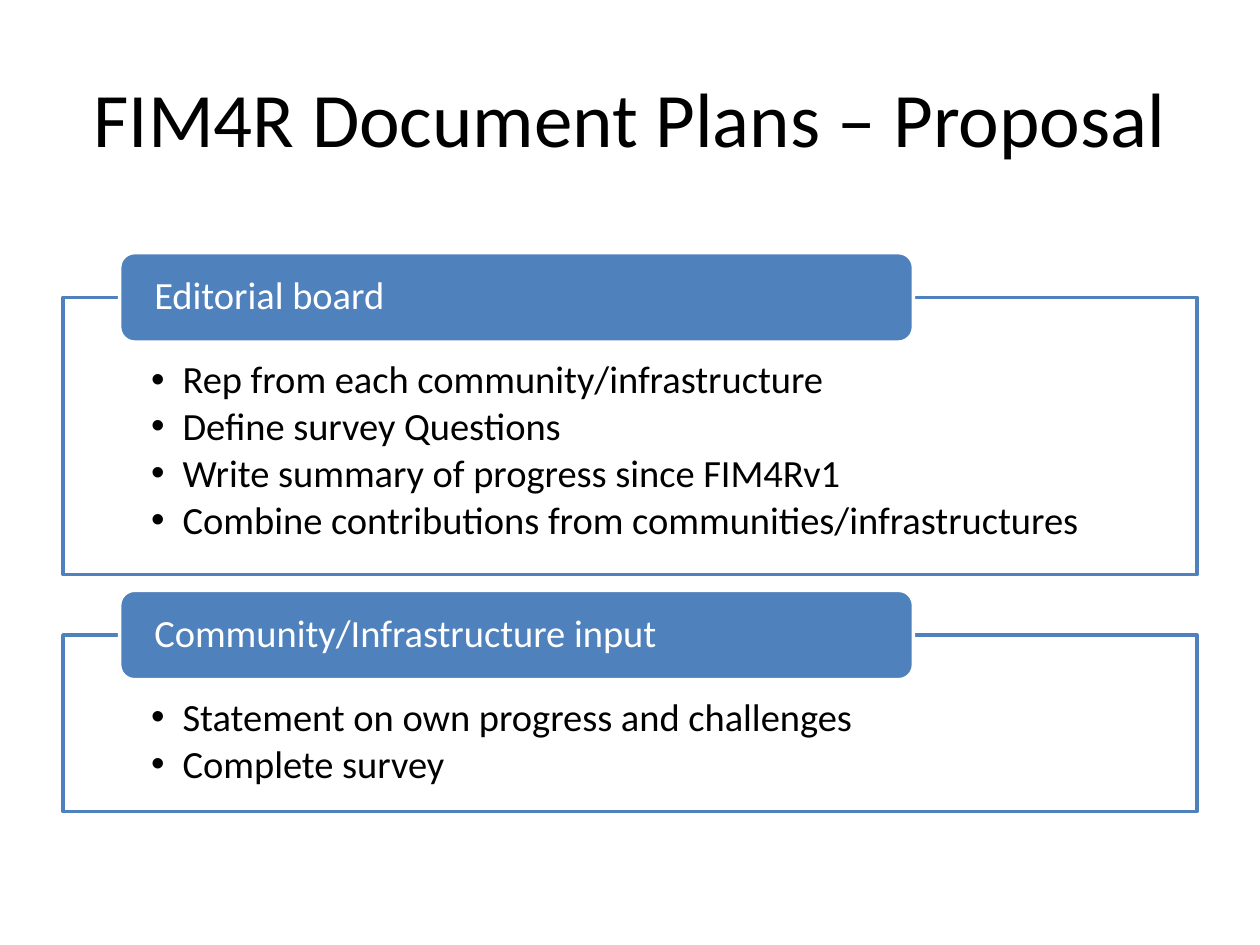
from lxml.etree import SubElement
from pptx import Presentation
from pptx.dml.color import RGBColor
from pptx.enum.shapes import MSO_SHAPE
from pptx.enum.text import MSO_ANCHOR, PP_ALIGN
from pptx.oxml.ns import qn
from pptx.util import Inches, Pt

COLORS = {"blue": "4F81BD", "white": "FFFFFF", "black": "000000"}
FONT = "Calibri"
TEXT_SIZE = 22
HEADER_HEIGHT = 0.71

# Top of the frame, height of the frame, header, bullets
SECTIONS = [
    (2.36, 2.2, "Editorial board", [
        "Rep from each community/infrastructure",
        "Define survey Questions",
        "Write summary of progress since FIM4Rv1",
        "Combine contributions from communities/infrastructures",
    ]),
    (5.04, 1.4, "Community/Infrastructure input", [
        "Statement on own progress and challenges",
        "Complete survey",
    ]),
]


def color(name):
    return RGBColor.from_string(COLORS[name])


def add_run(paragraph, text, size, color_name):
    run = paragraph.add_run()
    run.text = text
    run.font.name = FONT
    run.font.size = Pt(size)
    run.font.color.rgb = color(color_name)


def add_box(slide, preset, position, fill, line, anchor, insets):
    shape = slide.shapes.add_shape(preset, *[Inches(value) for value in position])
    shape.shadow.inherit = False
    shape.fill.solid()
    shape.fill.fore_color.rgb = color(fill)
    shape.line.color.rgb = color(line)
    shape.line.width = Pt(2)
    frame = shape.text_frame
    frame.word_wrap = True
    frame.vertical_anchor = anchor
    (frame.margin_left, frame.margin_top,
     frame.margin_right, frame.margin_bottom) = [Inches(value) for value in insets]
    return shape


def set_opacity(shape, percent):
    fill_color = shape.fill._xPr.find(qn("a:solidFill"))[0]
    SubElement(fill_color, qn("a:alpha"), val=str(percent * 1000))


def format_bullet(paragraph):
    paragraph.level = 1
    paragraph.space_after = Pt(3)
    properties = paragraph._p.get_or_add_pPr()
    properties.set("marL", str(Inches(0.25)))
    properties.set("indent", str(Inches(-0.25)))
    SubElement(properties, qn("a:buFont"), typeface="Arial")
    SubElement(properties, qn("a:buChar"), char="•")


def add_text_line(paragraph, text, color_name):
    paragraph.alignment = PP_ALIGN.LEFT
    paragraph.line_spacing = 0.9
    add_run(paragraph, text, TEXT_SIZE, color_name)


def add_section(slide, top, height, header, bullets):
    """Add a framed bullet list with a header straddling its top edge."""
    body = add_box(slide, MSO_SHAPE.RECTANGLE, (0.5, top, 9, height),
                   "white", "blue", MSO_ANCHOR.TOP, (0.7, 0.5, 0.7, 0.17))
    set_opacity(body, 90)
    frame = body.text_frame
    for index, bullet in enumerate(bullets):
        paragraph = frame.add_paragraph() if index else frame.paragraphs[0]
        add_text_line(paragraph, bullet, "black")
        format_bullet(paragraph)

    tab = add_box(slide, MSO_SHAPE.ROUNDED_RECTANGLE,
                  (0.95, top - HEADER_HEIGHT / 2, 6.3, HEADER_HEIGHT),
                  "blue", "white", MSO_ANCHOR.MIDDLE, (0.24, 0, 0.24, 0))
    add_text_line(tab.text_frame.paragraphs[0], header, "white")


def set_title(slide, text):
    title = slide.shapes.title
    title.left, title.top = Inches(0.5), Inches(0.3)
    title.width, title.height = Inches(9), Inches(1.25)
    title.text_frame.vertical_anchor = MSO_ANCHOR.MIDDLE
    paragraph = title.text_frame.paragraphs[0]
    paragraph.alignment = PP_ALIGN.CENTER
    add_run(paragraph, text, 44, "black")


def main():
    presentation = Presentation()
    presentation.slide_width = Inches(10)
    presentation.slide_height = Inches(7.5)
    slide = presentation.slides.add_slide(presentation.slide_layouts[5])
    set_title(slide, "FIM4R Document Plans – Proposal")
    for section in SECTIONS:
        add_section(slide, *section)
    presentation.save("out.pptx")


if __name__ == "__main__":
    main()
